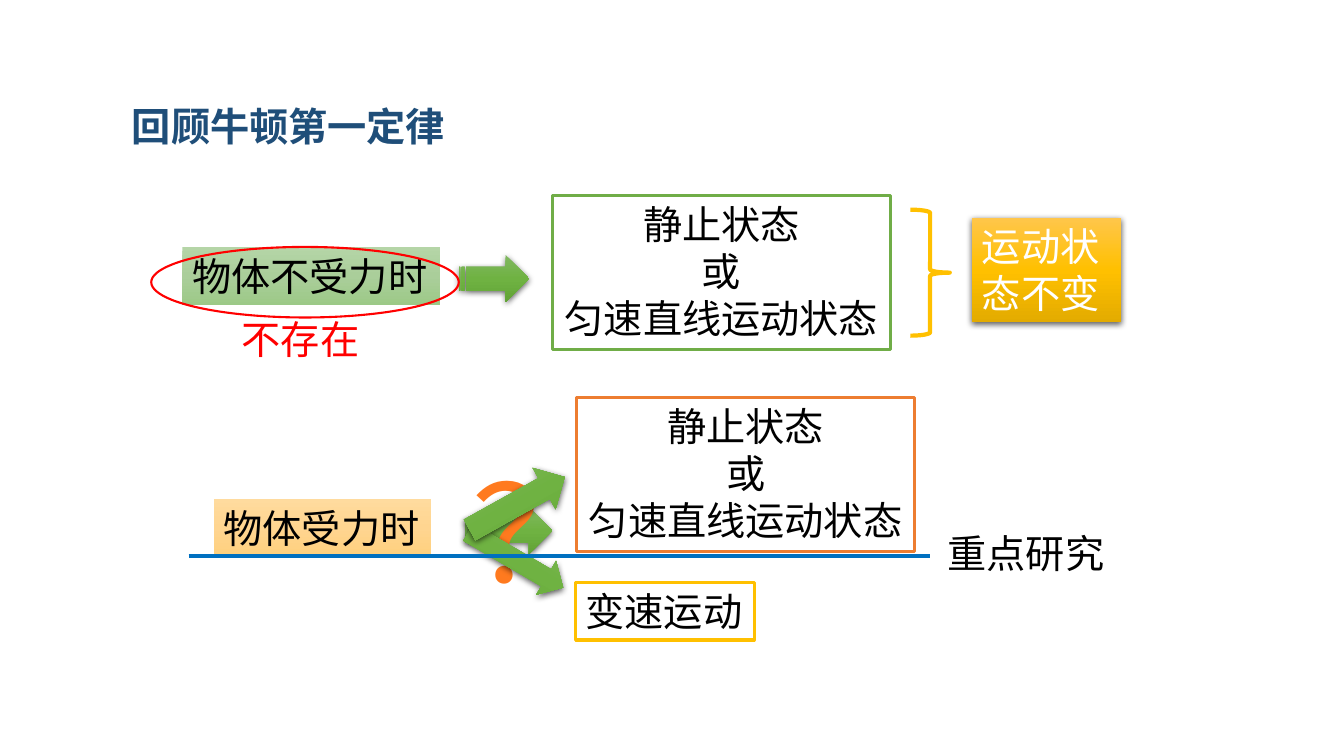
from copy import deepcopy

from lxml import etree
from pptx import Presentation
from pptx import util as u
from pptx.dml.color import RGBColor
from pptx.enum import shapes, text
from pptx.oxml import ns, parse_xml

FONT = "Noto Sans CJK SC"
GREEN = ["81B861", "6FB242", "62A336"]
GOLD = ["FFC64B", "FFC000", "E3AB00"]
STATES = "静止状态\n或\n匀速直线运动状态"
SHADOW = (
    f'<a:outerShdw {ns.nsdecls("a")} blurRad="57150" dist="19050" dir="5400000" '
    'algn="ctr" rotWithShape="0"><a:srgbClr val="000000"><a:alpha val="63000"/>'
    '</a:srgbClr></a:outerShdw>'
)
kinds = shapes.MSO_SHAPE
rgb = RGBColor.from_string

prs = Presentation()
prs.slide_width, prs.slide_height = u.Inches(13.33), u.Inches(7.5)
slide = prs.slides.add_slide(prs.slide_layouts[6])


def add_block(kind, box, gradient=None, line=None, width=2.25, shadow=False, rotation=0):
    """Preset shape with a three-step vertical gradient or a plain outline."""
    block = slide.shapes.add_shape(kind, *[u.Inches(v) for v in box])
    block.rotation = rotation
    block.shadow.inherit = False
    if shadow:
        block._element.spPr.find(ns.qn("a:effectLst")).append(parse_xml(SHADOW))
    if gradient:
        block.fill.gradient()
        block.fill.gradient_angle = 270
        first = block._element.spPr.find(".//" + ns.qn("a:gs"))
        middle = deepcopy(first)
        middle.set("pos", "50000")
        first.addnext(middle)
        for stop, shade in zip(block.fill.gradient_stops, gradient):
            stop.color.rgb = rgb(shade)
    else:
        block.fill.background()
    if line:
        block.line.color.rgb = rgb(line)
        block.line.width = u.Pt(width)
    else:
        block.line.fill.background()
    return block


def write(words, color="000000", box=None, block=None, size=28, wrap=False, center=False):
    """Text in the given block, or in a new text box."""
    holder = block or slide.shapes.add_textbox(*[u.Inches(v) for v in box])
    frame = holder.text_frame
    frame.text = words
    frame.word_wrap = wrap
    frame.auto_size = text.MSO_AUTO_SIZE.SHAPE_TO_FIT_TEXT
    frame.vertical_anchor = text.MSO_ANCHOR.TOP
    for paragraph in frame.paragraphs:
        paragraph.alignment = text.PP_ALIGN.CENTER if center else text.PP_ALIGN.LEFT
        for run in paragraph.runs:
            run.font.name = FONT
            run.font.size = u.Pt(size)
            run.font.color.rgb = rgb(color)
            etree.SubElement(run.font._element, ns.qn("a:ea"), typeface=FONT)
    return frame


# Conditions: no force, force
no_force = add_block(kinds.RECTANGLE, (1.81, 2.45, 2.56, 0.58), ["B5D5A7", "AACE9A", "9CC987"])
write("物体不受力时", block=no_force)
force = add_block(kinds.RECTANGLE, (2.12, 4.95, 2.16, 0.58), ["FFDB9E", "FFD590", "FFD07C"])
write("物体受力时", block=force)

# No force: resulting states and the conclusion
add_block(kinds.STRIPED_RIGHT_ARROW, (4.61, 5.03, 0.87, 0.47), GREEN, shadow=True)
rest_states = add_block(kinds.RECTANGLE, (5.48, 1.94, 3.35, 1.53), line="70AD47")
write(STATES, block=rest_states, center=True)
add_block(kinds.STRIPED_RIGHT_ARROW, (4.55, 2.53, 0.7, 0.47), GREEN, shadow=True)
add_block(kinds.RIGHT_BRACE, (9.03, 2.08, 0.39, 1.25), line="FFC000", width=3)
unchanged = add_block(kinds.RECTANGLE, (9.64, 2.16, 1.48, 1.04), GOLD, shadow=True)
write("运动状态不变", "FFFFFF", block=unchanged, wrap=True)

# Force: question mark and the two possible outcomes
write("？", "FF7A1F", box=(4.59, 4.41, 0.87, 1.72), size=96, wrap=True, center=True)
add_block(kinds.RIGHT_ARROW, (4.57, 5.36, 1.09, 0.39), GREEN, shadow=True, rotation=30.3)
changing = add_block(kinds.RECTANGLE, (5.71, 5.78, 1.77, 0.57), line="FFC000")
write("变速运动", block=changing)
add_block(kinds.RIGHT_ARROW, (4.59, 4.76, 1.08, 0.47), GREEN, shadow=True, rotation=330.9)
balanced_states = add_block(kinds.RECTANGLE, (5.72, 3.94, 3.35, 1.53), line="ED7D31")
write(STATES, block=balanced_states, center=True)

# Red remark on the first condition
add_block(kinds.OVAL, (1.5, 2.45, 3.05, 0.7), line="FF0000", width=1.5)
write("不存在", "FF0000", box=(2.3, 3.08, 1.37, 0.57))

# Focus line
focus = slide.shapes.add_connector(
    shapes.MSO_CONNECTOR.STRAIGHT,
    u.Inches(1.87), u.Inches(5.52), u.Inches(9.22), u.Inches(5.52))
focus.line.color.rgb = rgb("0070C0")
focus.line.width = u.Pt(3)
etree.SubElement(focus._element.spPr, ns.qn("a:effectLst"))
write("重点研究", box=(9.3, 5.2, 1.78, 0.57))

# Title
title = write("回顾牛顿第一定律", "1F4E79", box=(1.21, 0.73, 3.52, 0.72), wrap=True)
title.paragraphs[0].line_spacing = 1.5
title.paragraphs[0].runs[0].font.bold = True

prs.save("out.pptx")
